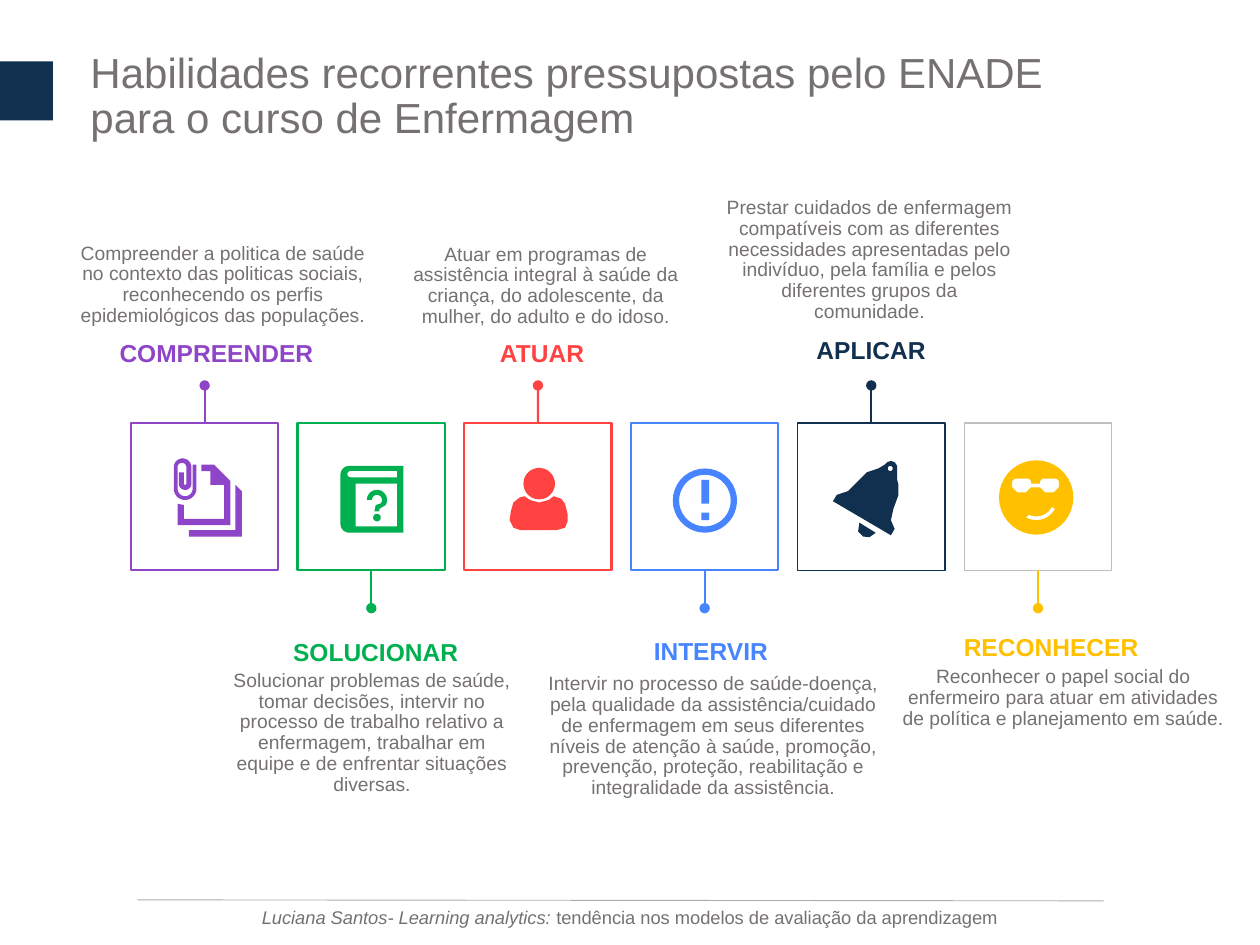
import math

import lxml.etree
import pptx
import pptx.dml.color
import pptx.enum.shapes
import pptx.enum.text
import pptx.oxml.ns
import pptx.util

Cm, Pt = pptx.util.Cm, pptx.util.Pt
RGBColor = pptx.dml.color.RGBColor
ALIGN = pptx.enum.text.PP_ALIGN
qn = pptx.oxml.ns.qn

GRAY = RGBColor(0x76, 0x71, 0x71)
RULE = RGBColor(0xAF, 0xAB, 0xAB)
PALE = RGBColor(0xBF, 0xBF, 0xBF)
NAVY = RGBColor(0x11, 0x30, 0x4F)
VIOLET = RGBColor(0x8F, 0x45, 0xC7)
GREEN = RGBColor(0x00, 0xB0, 0x50)
RED = RGBColor(0xFF, 0x43, 0x43)
BLUE = RGBColor(0x47, 0x84, 0xFF)
GOLD = RGBColor(0xFF, 0xC0, 0x00)

# Row of boxes, in cm
LEFT, TOP, SIDE, STEP, STEM = 2.64, 8.53, 2.97, 3.36, 0.76
UNIT = 0.0254  # icon grid in cm


def write(para, text, size=11, color=GRAY, bold=False, italic=False,
          align=ALIGN.LEFT, font="Arial"):
    para.alignment, para.line_spacing = align, 0.9
    run = para.add_run()
    run.text = text
    run.font.name, run.font.size = font, Pt(size)
    run.font.bold, run.font.italic = bold, italic
    run.font.color.rgb = color


def arc(x, y, r, start=0, end=360):
    """Points on a circle; angles in degrees, clockwise from the right."""
    count = max(4, round(abs(end - start) / 10))
    turns = [math.radians(start + (end - start) * i / count)
             for i in range(count + 1)]
    return [(x + r * math.cos(t), y + r * math.sin(t)) for t in turns]


def rect(x, y, x2, y2):
    return [(x, y), (x2, y), (x2, y2), (x, y2)]


class Deck:
    def __init__(self):
        self.file = pptx.Presentation()
        self.file.slide_width, self.file.slide_height = Cm(25.4), Cm(19.05)
        self.slide = self.file.slides.add_slide(self.file.slide_layouts[5])
        self.shapes = self.slide.shapes

    def frame(self, shape):
        frame = shape.text_frame
        frame.word_wrap = True
        frame.auto_size = pptx.enum.text.MSO_AUTO_SIZE.NONE
        frame.vertical_anchor = pptx.enum.text.MSO_ANCHOR.BOTTOM
        return frame

    def title(self, lines, x, y, w, h):
        shape = self.shapes.title
        shape.left, shape.top, shape.width, shape.height = map(Cm, (x, y, w, h))
        frame = self.frame(shape)
        for i, line in enumerate(lines):
            para = frame.add_paragraph() if i else frame.paragraphs[0]
            para.space_before = Pt(0)
            write(para, line, size=24)

    def text(self, x, y, w, h):
        box = self.shapes.add_textbox(Cm(x), Cm(y), Cm(w), Cm(h))
        return self.frame(box).paragraphs[0]

    def box(self, x, y, w, h, fill=None, line=None, width=1.25):
        kind = pptx.enum.shapes.MSO_SHAPE.RECTANGLE
        shape = self.shapes.add_shape(kind, Cm(x), Cm(y), Cm(w), Cm(h))
        self.paint(shape, fill)
        if line is not None:
            shape.line.color.rgb, shape.line.width = line, Pt(width)
        return shape

    def paint(self, shape, fill):
        shape.shadow.inherit = False
        shape.line.fill.background()
        if fill is None:
            shape.fill.background()
        else:
            shape.fill.solid()
            shape.fill.fore_color.rgb = fill

    def line(self, x, y, x2, y2, color, width, dot=False):
        kind = pptx.enum.shapes.MSO_CONNECTOR.STRAIGHT
        line = self.shapes.add_connector(kind, Cm(x), Cm(y), Cm(x2), Cm(y2))
        line.line.color.rgb, line.line.width = color, Pt(width)
        if dot:
            ln = line.line._get_or_add_ln()
            lxml.etree.SubElement(ln, qn("a:tailEnd"), type="oval")
        lxml.etree.SubElement(line._element.spPr, qn("a:effectLst"))
        return line

    def icon(self, x, y, parts, color):
        parts = [[(Cm(x + a * UNIT), Cm(y + b * UNIT)) for a, b in part]
                 for part in parts]
        pen = self.shapes.build_freeform(*parts[0][0])
        for i, part in enumerate(parts):
            if i:
                pen.move_to(*part[0])
            pen.add_line_segments(part[1:], close=True)
        self.paint(pen.convert_to_shape(), color)


# Icon outlines, measured from the corner of their box
PAPERS = [
    [(66, 33), (56, 33), (56, 38), (63, 38), (63, 49), (74, 49), (74, 76),
     (42, 76), (42, 65), (37, 64), (37, 81), (79, 81), (79, 46)],
    [(52, 33), (49, 33), *arc(43, 52, 6, 0, 180), *arc(40.5, 35, 3.5, 180, 360),
     *arc(43, 48, 1, 0, 180), (42, 39), (38, 39), *arc(43, 48, 5, 180, 0),
     *arc(41, 35, 7, 0, -180), *arc(43, 52, 9, 180, 0)],
    [(83, 49), (83, 85), (46, 85), (46, 90), (88, 90), (88, 54)]]
BOOK = [
    [*arc(41, 41, 7, 270, 180), *arc(41, 80, 7, 180, 90), (84, 87), (84, 34)],
    rect(46, 48, 79, 82),
    [*arc(42, 40.5, 2.5, 270, 90), (79, 43), (79, 38)],
    [(61, 70), (62, 65), *arc(63, 61, 4, 45, -180), *arc(63, 61, 8, -180, 30),
     (65, 68), (65, 70)],
    arc(63, 75, 3)]
PERSON = [
    arc(59.5, 48, 12.5),
    [(36, 77), (37, 70), (39, 63), (44, 59), (48, 58), (52, 61), (59.5, 63),
     (67, 61), (71, 58), (77, 60), (80, 64), (82, 72), (82, 78), (80, 83),
     (73, 85), (45, 85), (39, 83)]]
ALERT = [arc(58.7, 61.5, 25.5), arc(58.7, 61.5, 20.5),
         rect(56, 45, 62, 64), rect(56, 71, 62, 77)]
BELL = [
    [(79, 45), (79, 39), (79, 34), (77, 31), (74, 30), (71, 31), (69, 33),
     (64, 36), (55, 39), (47, 47), (40, 54), (31, 57), (28, 62), (74, 89),
     (77, 84), (74, 77), (76, 68), (80, 57), (80, 49)],
    arc(73.5, 36, 2),
    [(62, 87), (57, 90.5), (52, 90), (48, 86), (49, 79)]]
FACE = [
    arc(57, 59, 29.5),
    [*arc(57, 60, 14, 115, 28), *arc(57, 60, 17, 28, 118)],
    [(38, 46), (40, 44), (51, 44), (53, 46), (53, 48), (60, 48), (60, 46),
     (62, 44), (73, 44), (75, 46), (75, 51), (71, 55), (64, 55), (60, 51),
     (53, 51), (49, 55), (42, 55), (38, 51)]]

# Name, colour, edge, edge width, icon, name place, text place, text
SKILLS = [
    ("COMPREENDER", VIOLET, VIOLET, 1.25, PAPERS, (2.16, 6.55, 4.78), (1.22, 4.55, 6.55),
     "Compreender a politica de saúde no contexto das politicas sociais, "
     "reconhecendo os perfis epidemiológicos das populações."),
    ("SOLUCIONAR", GREEN, GREEN, 1.25, BOOK, (5.66, 12.57, 3.96), (4.34, 14, 6.32),
     "Solucionar problemas de saúde, tomar decisões, intervir no processo de trabalho "
     "relativo a enfermagem, trabalhar em equipe e de enfrentar situações diversas."),
    ("ATUAR", RED, RED, 1.25, PERSON, (9.83, 6.55, 2.26), (7.87, 4.57, 6.27),
     "Atuar em programas de assistência integral à saúde da criança, "
     "do adolescente, da mulher, do adulto e do idoso."),
    ("INTERVIR", BLUE, BLUE, 1.25, ALERT, (12.93, 12.55, 3.3), (10.72, 14.07, 7.32),
     "Intervir no processo de saúde-doença, pela qualidade da assistência/cuidado de "
     "enfermagem em seus diferentes níveis de atenção à saúde, promoção, prevenção, "
     "proteção, reabilitação e integralidade da assistência."),
    ("APLICAR", NAVY, NAVY, 0.75, BELL, (16.21, 6.5, 2.79), (14.38, 4.47, 6.3),
     "Prestar cuidados de enfermagem compatíveis com as diferentes necessidades "
     "apresentadas pelo indivíduo, pela família e pelos diferentes grupos da comunidade."),
    ("RECONHECER", GOLD, PALE, 0.75, FACE, (19.18, 12.47, 4.55), (17.93, 12.67, 7.01),
     "Reconhecer o papel social do enfermeiro para atuar em atividades "
     "de política e planejamento em saúde."),
]


def main():
    deck = Deck()

    # Heading
    deck.title(["Habilidades recorrentes pressupostas pelo ENADE",
                "para o curso de Enfermagem"], 1.57, 0.84, 25.4, 2.16)
    deck.box(0, 1.24, 1.07, 1.19, fill=NAVY)

    # Skills: stems point up and down in turn
    for i, (name, color, edge, width, icon, head, body, text) in enumerate(SKILLS):
        x, down = LEFT + i * STEP, i % 2
        box = deck.box(x, TOP, SIDE, SIDE, line=edge, width=width)
        mid, y = x + SIDE / 2, TOP + SIDE * down
        end = y + STEM if down else y - STEM
        stem = deck.line(mid, y, mid, end, color, 1.25, dot=True)
        stem.begin_connect(box, 2 if down else 0)
        deck.icon(x, TOP, icon, color)
        write(deck.text(*head, 0.99), name, size=14, color=color, bold=True)
        write(deck.text(*body, 2.16), text, align=ALIGN.CENTER)

    # Footer
    deck.line(2.77, 18.14, 22.25, 18.16, RULE, 0.5)
    foot = deck.text(0, 17.91, 25.4, 0.94)
    write(foot, "Luciana Santos- Learning analytics: ", size=10.5, italic=True,
          align=ALIGN.CENTER)
    write(foot, "tendência nos modelos de avaliação da aprendizagem", size=10.5,
          align=ALIGN.CENTER)

    deck.file.save("out.pptx")


if __name__ == "__main__":
    main()
